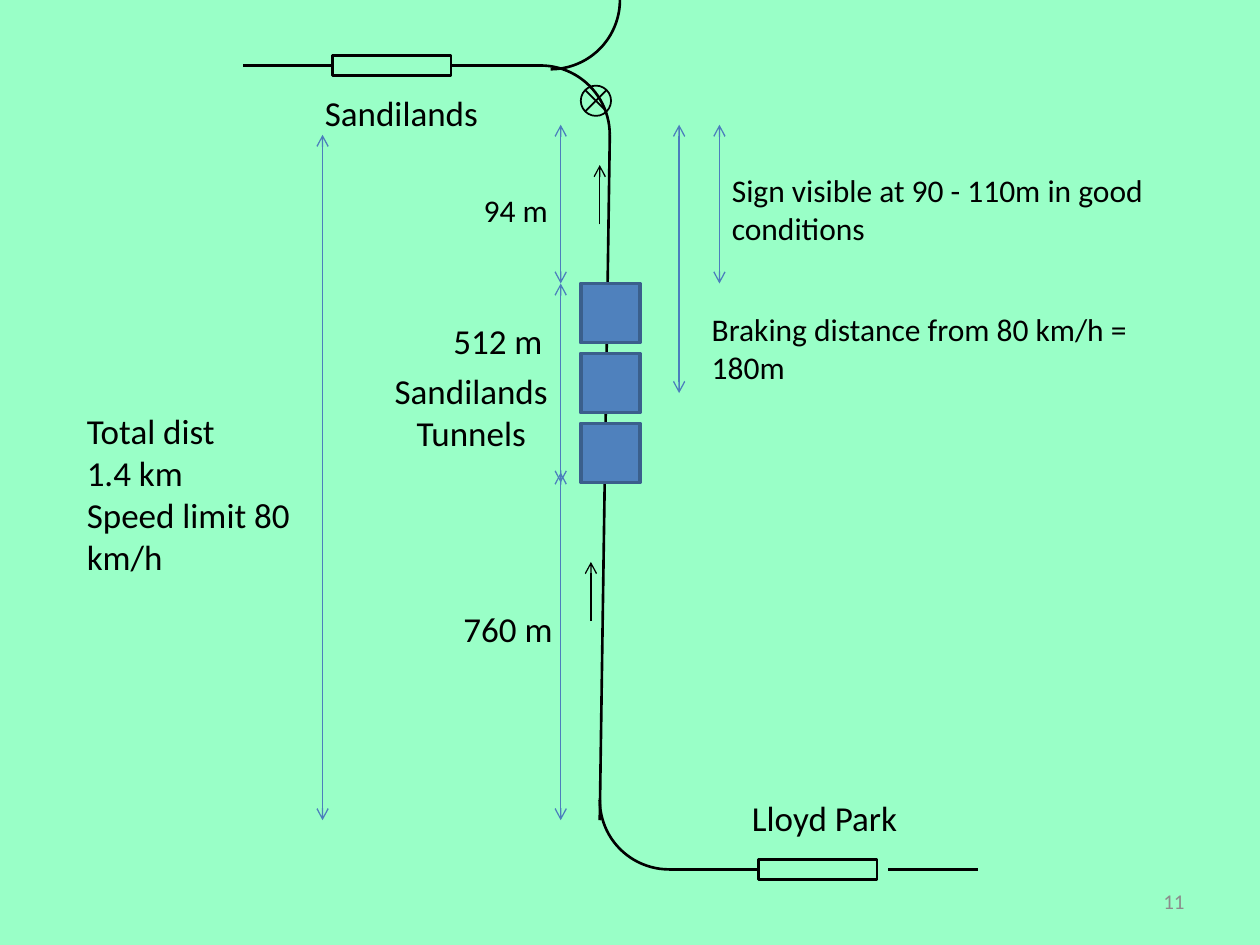
import pptx
import pptx.dml.color
import pptx.enum.shapes
import pptx.enum.text
import pptx.oxml.ns
import pptx.util
from lxml import etree
from pptx.util import Inches

SHAPES = pptx.enum.shapes.MSO_SHAPE
ALIGN = pptx.enum.text.PP_ALIGN
BLACK = "000000"
DIMENSION_BLUE = "4B7EBC"
TOP, LEFT, BOTTOM, RIGHT = range(4)


def color(hex_value):
    return pptx.dml.color.RGBColor.from_string(hex_value)


def apply_format(target, values):
    for name, value in values.items():
        setattr(target, name, value)


def style_line(line, hex_value, width):
    line.color.rgb = color(hex_value)
    line.width = pptx.util.Pt(width)


def add_outline(slide, preset, box, width=1.5, line=BLACK, fill=None, rotation=0):
    shape = slide.shapes.add_shape(preset, *map(Inches, box))
    shape.shadow.inherit = False
    shape.rotation = rotation
    if fill:
        shape.fill.solid()
        shape.fill.fore_color.rgb = color(fill)
    else:
        shape.fill.background()
    style_line(shape.line, line, width)
    return shape


def add_line(slide, start, end, hex_value=BLACK, width=1.5, arrow_ends=()):
    line = slide.shapes.add_connector(
        pptx.enum.shapes.MSO_CONNECTOR.STRAIGHT, *map(Inches, (*start, *end)))
    style_line(line.line, hex_value, width)
    line_xml = line.line._get_or_add_ln()
    for arrow_end in arrow_ends:
        etree.SubElement(line_xml, pptx.oxml.ns.qn(f"a:{arrow_end}"), type="arrow")
    etree.SubElement(line._element.spPr, pptx.oxml.ns.qn("a:effectLst"))
    return line


def add_dimension(slide, x, top, bottom):
    """Draw a vertical distance marker with an arrowhead at each end."""
    add_line(slide, (x, top), (x, bottom), DIMENSION_BLUE, 0.75, ("headEnd", "tailEnd"))


def add_travel_arrow(slide, x, bottom):
    add_line(slide, (x, bottom), (x, bottom - 0.47), width=0.75, arrow_ends=("tailEnd",))


def add_label(slide, box, *lines, size=20, align=ALIGN.LEFT, hex_value=BLACK,
              anchor=pptx.enum.text.MSO_ANCHOR.TOP,
              auto_size=pptx.enum.text.MSO_AUTO_SIZE.SHAPE_TO_FIT_TEXT):
    frame = slide.shapes.add_textbox(*map(Inches, box)).text_frame
    apply_format(frame, {"word_wrap": True, "auto_size": auto_size,
                         "vertical_anchor": anchor, "text": "\n".join(lines)})
    for paragraph in frame.paragraphs:
        paragraph.alignment = align
        apply_format(paragraph.runs[0].font,
                     {"name": "Calibri", "size": pptx.util.Pt(size)})
        paragraph.runs[0].font.color.rgb = color(hex_value)


def add_track(slide):
    for left, top, rotation in ((3.74, 0.52, 0), (4.76, 5.8, 180), (3.82, -0.55, 90)):
        add_outline(slide, SHAPES.ARC, (left, top, 1.1, 1.1), rotation=rotation)
    add_line(slide, (4.84, 1.07), (4.76, 6.51))

    sandilands = add_outline(slide, SHAPES.RECTANGLE, (2.64, 0.44, 0.94, 0.16))
    add_line(slide, (1.93, 0.52), (2.64, 0.52)).end_connect(sandilands, LEFT)
    add_line(slide, (3.58, 0.52), (4.29, 0.52)).begin_connect(sandilands, RIGHT)

    lloyd_park = add_outline(slide, SHAPES.RECTANGLE, (6.02, 6.82, 0.94, 0.16))
    add_line(slide, (5.31, 6.9), (6.02, 6.9)).end_connect(lloyd_park, LEFT)
    add_line(slide, (7.05, 6.9), (7.76, 6.9))


def add_distances(slide):
    for x, top, bottom in ((4.45, 0.99, 2.25), (4.45, 2.25, 3.83), (4.45, 3.75, 6.51),
                           (5.71, 0.99, 2.25), (5.39, 0.99, 3.12), (2.56, 1.07, 6.51)):
        add_dimension(slide, x, top, bottom)
    add_label(slide, (3.74, 1.47, 1.42, 0.4), "94 m", size=18)
    add_label(slide, (3.5, 2.49, 1.42, 0.44), "512 m")
    add_label(slide, (3.58, 4.77, 1.42, 0.44), "760 m")
    add_label(slide, (5.71, 1.31, 3.62, 0.71),
              "Sign visible at 90 - 110m in good conditions", size=18)
    add_label(slide, (5.55, 2.41, 3.62, 0.71),
              "Braking distance from 80 km/h = 180m", size=18)
    add_label(slide, (0.59, 3.2, 1.89, 1.45),
              "Total dist", "1.4 km", "Speed limit 80 km/h")


def add_places(slide):
    add_label(slide, (5.87, 6.27, 1.73, 0.44), "Lloyd Park")
    add_label(slide, (2.48, 0.68, 1.57, 0.44), "Sandilands")
    add_label(slide, (3.03, 2.88, 1.42, 0.77), "Sandilands", "Tunnels",
              align=ALIGN.CENTER)


def add_tunnels(slide):
    for index in range(3):
        add_outline(slide, SHAPES.RECTANGLE, (4.61, 2.25 + 0.555 * index, 0.47, 0.47),
                    width=2, line="3A5F8C", fill="4F81BD")


def main():
    deck = pptx.Presentation()
    apply_format(deck, {"slide_width": Inches(10), "slide_height": Inches(7.5)})
    slide = deck.slides.add_slide(deck.slide_layouts[6])
    slide.background.fill.solid()
    slide.background.fill.fore_color.rgb = color("99FFC7")

    add_track(slide)
    add_places(slide)
    add_distances(slide)
    add_travel_arrow(slide, 4.69, 4.93)
    add_travel_arrow(slide, 4.76, 1.78)
    add_outline(slide, SHAPES.FLOWCHART_SUMMING_JUNCTION, (4.61, 0.68, 0.24, 0.24), width=1)
    add_label(slide, (7.17, 6.95, 2.33, 0.4), "11", size=12, align=ALIGN.RIGHT,
              hex_value="8C8C8C", anchor=pptx.enum.text.MSO_ANCHOR.MIDDLE,
              auto_size=pptx.enum.text.MSO_AUTO_SIZE.NONE)
    add_tunnels(slide)
    deck.save("out.pptx")


if __name__ == "__main__":
    main()
